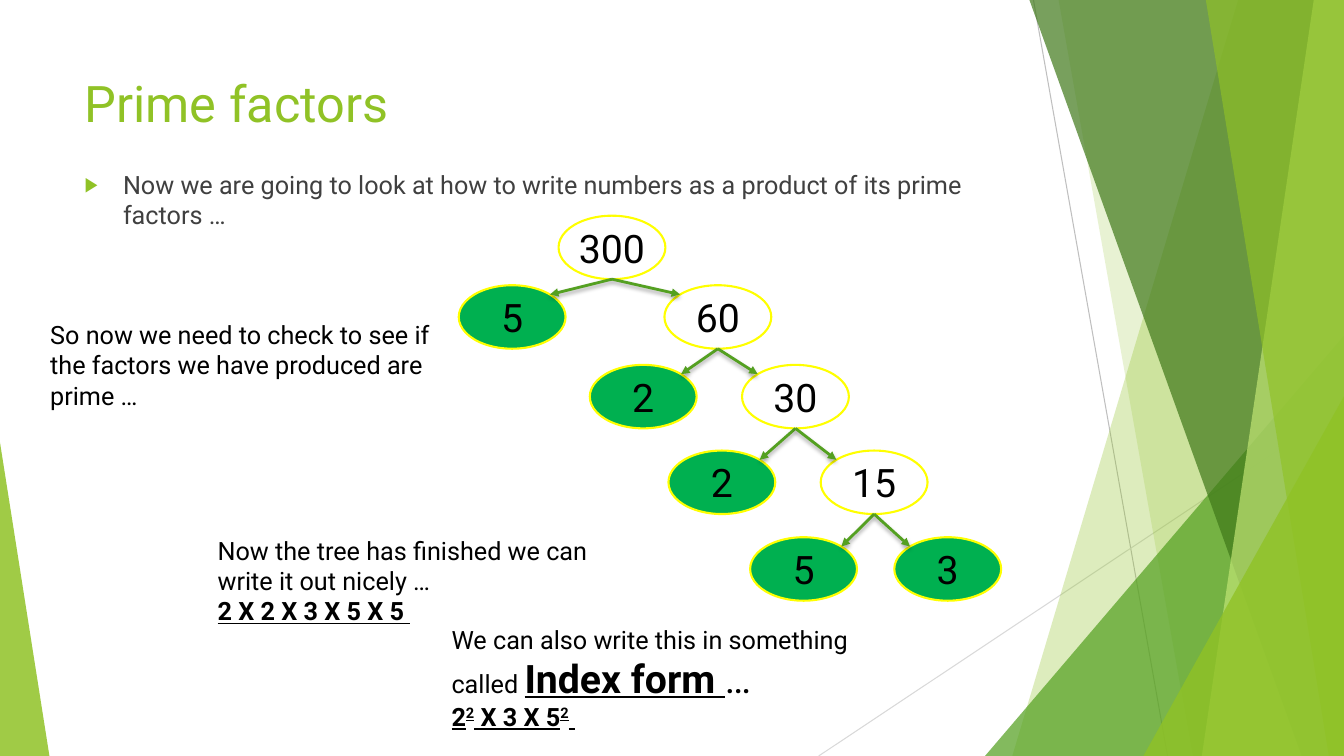
from math import sqrt

from lxml.etree import SubElement
from pptx import Presentation
from pptx.dml.color import RGBColor
from pptx.enum.shapes import MSO_CONNECTOR, MSO_SHAPE
from pptx.enum.text import MSO_ANCHOR, MSO_AUTO_SIZE, PP_ALIGN
from pptx.oxml.ns import qn
from pptx.util import Inches, Pt

FONT = "Roboto"
LIME = "90C226"
GREEN = "54A021"
NODE_WIDTH, NODE_HEIGHT = 1.06, 0.63

SLIVERS = [
    ([(12.28, 0), (13.33, 0), (13.33, 7.5), (10.04, 7.5)], LIME, 30),
    ([(10.5, 0), (13.33, 0), (13.33, 7.5), (11.83, 7.5)], LIME, 20),
    ([(13.33, 3.33), (13.33, 7.5), (9.77, 7.5)], GREEN, 72),
    ([(10.21, 0), (13.33, 0), (13.33, 7.5), (12.91, 7.5)], "3F7819", 70),
    ([(13.03, 0), (13.33, 0), (13.33, 7.5), (11.92, 7.5)], "C0E474", 70),
    ([(11.96, 0), (13.33, 0), (13.33, 7.5), (13.18, 7.5)], LIME, 65),
    ([(13.33, 3.93), (13.33, 7.5), (11.34, 7.5)], LIME, 80),
    ([(0, 4.39), (0.49, 7.5), (0, 7.5)], LIME, 85),
]

ROOT = ("300", 5.54, 2.14)
SPLITS = [
    (("5", 4.55, 2.83), ("60", 6.59, 2.83)),
    (("2", 5.85, 3.62), ("30", 7.36, 3.62)),
    (("2", 6.63, 4.47), ("15", 8.14, 4.47)),
    (("5", 7.44, 5.33), ("3", 8.87, 5.33)),
]


def color(value):
    return RGBColor.from_string(value)


def add_alpha(color_element, percent):
    SubElement(color_element, qn("a:alpha")).set("val", str(percent * 1000))


def add_span(para, text, size=18, ink="000000", bold=False, underline=False, raised=False):
    span = para.add_run()
    span.text = text
    span.font.name = FONT
    span.font.size = Pt(size)
    span.font.color.rgb = color(ink)
    span.font.bold = bold
    span.font.underline = underline
    if raised:
        span._r.get_or_add_rPr().set("baseline", "30000")


def add_sliver(page, points, fill, opacity):
    corners = [(Inches(x), Inches(y)) for x, y in points]
    builder = page.shapes.build_freeform(*corners[0])
    builder.add_line_segments(corners[1:])
    sliver = builder.convert_to_shape()
    sliver.shadow.inherit = False
    sliver.line.fill.background()
    sliver.fill.solid()
    sliver.fill.fore_color.rgb = color(fill)
    add_alpha(sliver._element.spPr.find(f".//{qn('a:srgbClr')}"), opacity)


def add_line(page, start, end, ink, width):
    ends = [Inches(value) for value in (*start, *end)]
    line = page.shapes.add_connector(MSO_CONNECTOR.STRAIGHT, *ends)
    line.line.color.rgb = color(ink)
    line.line.width = Pt(width)
    effects = SubElement(line._element.spPr, qn("a:effectLst"))
    return line, effects


def add_arrow(page, start, end):
    arrow, effects = add_line(page, start, end, GREEN, 2)
    SubElement(arrow.line._get_or_add_ln(), qn("a:tailEnd")).set("type", "triangle")
    shadow = SubElement(effects, qn("a:outerShdw"), blurRad=str(Pt(3)),
                        dist=str(Pt(2)), dir="5400000", rotWithShape="0")
    add_alpha(SubElement(shadow, qn("a:srgbClr"), val="000000"), 35)


def add_node(page, number, left, top, prime):
    node = page.shapes.add_shape(MSO_SHAPE.OVAL, Inches(left), Inches(top),
                                 Inches(NODE_WIDTH), Inches(NODE_HEIGHT))
    node.shadow.inherit = False
    node.line.color.rgb = color("FFFF00")
    node.line.width = Pt(1.5)
    if prime:
        node.fill.solid()
        node.fill.fore_color.rgb = color("00B050")
    else:
        node.fill.background()
    frame = node.text_frame
    frame.word_wrap = False
    frame.margin_left = frame.margin_right = frame.margin_top = frame.margin_bottom = 0
    frame.vertical_anchor = MSO_ANCHOR.MIDDLE
    frame.paragraphs[0].alignment = PP_ALIGN.CENTER
    add_span(frame.paragraphs[0], number, size=28)


def add_branch(page, parent, child, side):
    start = (parent[1] + NODE_WIDTH / 2, parent[2] + NODE_HEIGHT)
    reach = 1 / sqrt(2)
    end = (child[1] + NODE_WIDTH / 2 * (1 + side * reach),
           child[2] + NODE_HEIGHT / 2 * (1 - reach))
    add_arrow(page, start, end)


def add_tree(page):
    add_node(page, *ROOT, prime=False)
    parent = ROOT
    for level, (left_child, right_child) in enumerate(SPLITS, 1):
        add_node(page, *left_child, prime=True)
        add_node(page, *right_child, prime=level == len(SPLITS))
        add_branch(page, parent, left_child, 1)
        add_branch(page, parent, right_child, -1)
        parent = right_child


def add_note(page, left, top, width, height, paragraphs):
    box = page.shapes.add_textbox(Inches(left), Inches(top), Inches(width), Inches(height))
    frame = box.text_frame
    frame.word_wrap = True
    for index, spans in enumerate(paragraphs):
        para = frame.add_paragraph() if index else frame.paragraphs[0]
        for text, style in spans:
            add_span(para, text, **style)


def fill_placeholder(box, left, top, width, height, text, **style):
    box.left, box.top = Inches(left), Inches(top)
    box.width, box.height = Inches(width), Inches(height)
    frame = box.text_frame
    frame.auto_size = MSO_AUTO_SIZE.NONE
    frame.vertical_anchor = MSO_ANCHOR.TOP
    para = frame.paragraphs[0]
    para.alignment = PP_ALIGN.LEFT
    add_span(para, text, **style)
    return para


def add_bullet(para):
    para.space_before = Pt(10)
    settings = para._p.get_or_add_pPr()
    settings.set("marL", str(Inches(0.38)))
    settings.set("indent", str(Inches(-0.38)))
    SubElement(SubElement(settings, qn("a:buClr")), qn("a:srgbClr"), val=LIME)
    SubElement(settings, qn("a:buSzPct"), val="80000")
    SubElement(settings, qn("a:buChar"), char="▶")


def main():
    deck = Presentation()
    deck.slide_width, deck.slide_height = Inches(13.33), Inches(7.5)
    page = deck.slides.add_slide(deck.slide_layouts[1])

    add_line(page, (10.25, 0), (11.58, 7.5), "BFBFBF", 0.75)
    add_line(page, (13.33, 4.03), (8.12, 7.5), "D9D9D9", 0.75)
    for points, fill, opacity in SLIVERS:
        add_sliver(page, points, fill, opacity)

    fill_placeholder(page.shapes.title, 0.74, 0.67, 9.4, 1.44,
                     "Prime factors", size=36, ink=LIME)
    intro = fill_placeholder(
        page.placeholders[1], 0.74, 1.63, 9.4, 4.24,
        "Now we are going to look at how to write numbers as a product of its prime factors …",
        ink="404040")
    add_bullet(intro)
    add_tree(page)

    plain = {}
    strong = {"bold": True, "underline": True}
    power = {**strong, "raised": True}
    add_note(page, 0.4, 3.12, 4.1, 1.01, [
        [("So now we need to check to see if the factors we have produced are prime …", plain)],
    ])
    add_note(page, 2.06, 5.26, 4.19, 1.01, [
        [("Now the tree has finished we can write it out nicely …", plain)],
        [("2 X 2 X 3 X 5 X 5 ", strong)],
    ])
    add_note(page, 4.38, 6.14, 4.19, 1.18, [
        [("We can also write this in something called ", plain),
         ("Index form ", {**strong, "size": 28}), ("…", {"size": 28})],
        [("2", strong), ("2", power), (" X 3 X 5", strong), ("2", power), (" ", strong)],
    ])
    deck.save("out.pptx")


if __name__ == "__main__":
    main()
